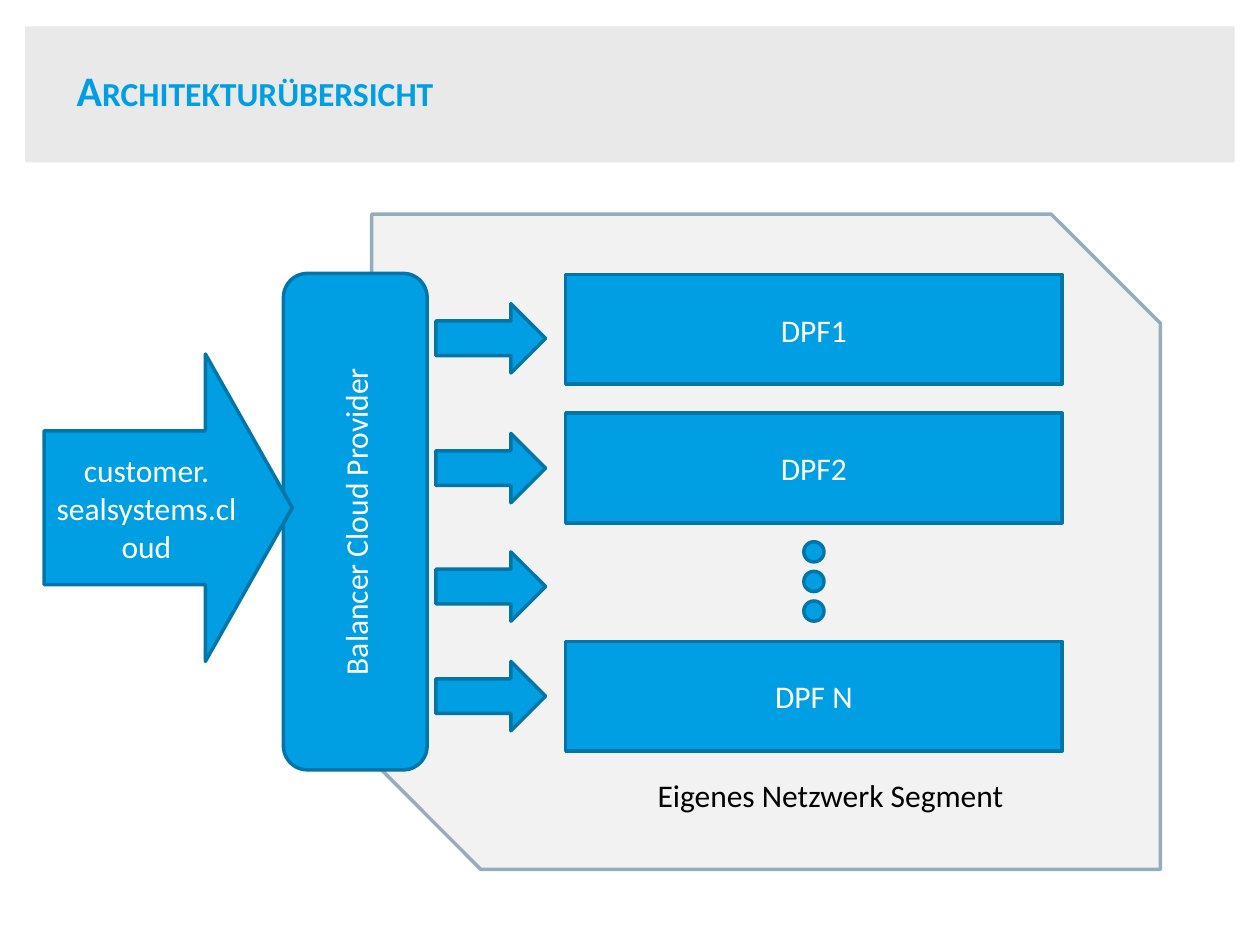
from pptx import Presentation
from pptx.dml.color import RGBColor
from pptx.enum.shapes import MSO_SHAPE
from pptx.enum.text import MSO_ANCHOR, PP_ALIGN
from pptx.util import Inches, Pt

COLORS = {
    "blue": "009EE2",
    "blue_line": "0075A7",
    "band": "E9E9EA",
    "segment": "F2F2F2",
    "segment_line": "95ACBA",
    "white": "FFFFFF",
    "black": "000000",
}
FONT = "Calibri"
DPF_ROWS = [("DPF1", 2.18), ("DPF2", 3.28), ("DPF N", 5.09)]
ARROW_TOPS = [2.41, 3.44, 4.38, 5.25]
DOT_TOP, DOT_STEP, DOT_COUNT = 4.3, 0.235, 3


def rgb(name):
    return RGBColor.from_string(COLORS[name])


def add_run(p, text, color, size=18, bold=False):
    r = p.add_run()
    r.text = text
    r.font.name = FONT
    r.font.size = Pt(size)
    r.font.bold = bold
    r.font.color.rgb = rgb(color)
    return r


def add_box(shapes, kind, box, fill="blue", line="blue_line", lines=()):
    sp = shapes.add_shape(kind, *map(Inches, box))
    sp.shadow.inherit = False
    sp.fill.solid()
    sp.fill.fore_color.rgb = rgb(fill)
    if line:
        sp.line.color.rgb = rgb(line)
        sp.line.width = Pt(2)
    else:
        sp.line.fill.background()
    tf = sp.text_frame
    tf.word_wrap = True
    tf.vertical_anchor = MSO_ANCHOR.MIDDLE
    p = tf.paragraphs[0]
    p.alignment = PP_ALIGN.CENTER
    for i, text in enumerate(lines):
        if i:
            p.add_line_break()
        add_run(p, text, "white")
    return sp


def add_label(s, box, text, color, anchor=MSO_ANCHOR.TOP, **font):
    tf = s.shapes.add_textbox(*map(Inches, box)).text_frame
    tf.word_wrap = True
    tf.vertical_anchor = anchor
    return add_run(tf.paragraphs[0], text, color, **font)


def add_title(s):
    add_box(s.shapes, MSO_SHAPE.RECTANGLE, (0.2, 0.21, 9.6, 1.08), "band", None)
    r = add_label(s, (0.51, 0.28, 6.85, 0.87), "Architekturübersicht", "blue",
                  MSO_ANCHOR.MIDDLE, size=24, bold=True)
    r.font._element.set("cap", "small")


def add_dots(s):
    group = s.shapes.add_group_shape()
    for i in range(DOT_COUNT):
        add_box(group.shapes, MSO_SHAPE.OVAL,
                (6.38, DOT_TOP + i * DOT_STEP, 0.16, 0.16))


def main():
    prs = Presentation()
    prs.slide_width, prs.slide_height = Inches(10), Inches(7.5)
    s = prs.slides.add_slide(prs.slide_layouts[6])

    add_title(s)
    add_box(s.shapes, MSO_SHAPE.SNIP_2_DIAG_RECTANGLE, (2.95, 1.7, 6.26, 5.2),
            "segment", "segment_line")
    balancer = add_box(s.shapes, MSO_SHAPE.ROUNDED_RECTANGLE,
                       (0.85, 3.57, 3.94, 1.14),
                       lines=["Balancer Cloud Provider"])
    balancer.rotation = 270
    for name, top in DPF_ROWS:
        add_box(s.shapes, MSO_SHAPE.RECTANGLE, (4.49, top, 3.94, 0.87),
                lines=[name])
    add_label(s, (5.12, 6.11, 4.09, 0.4), "Eigenes Netzwerk Segment", "black")
    for top in ARROW_TOPS:
        add_box(s.shapes, MSO_SHAPE.RIGHT_ARROW, (3.46, top, 0.87, 0.55))
    add_dots(s)
    customer = add_box(s.shapes, MSO_SHAPE.RIGHT_ARROW, (0.35, 2.81, 1.97, 2.44),
                       lines=["customer.", "sealsystems.cloud"])
    customer.adjustments[1] = 0.35

    prs.save("out.pptx")


if __name__ == "__main__":
    main()
